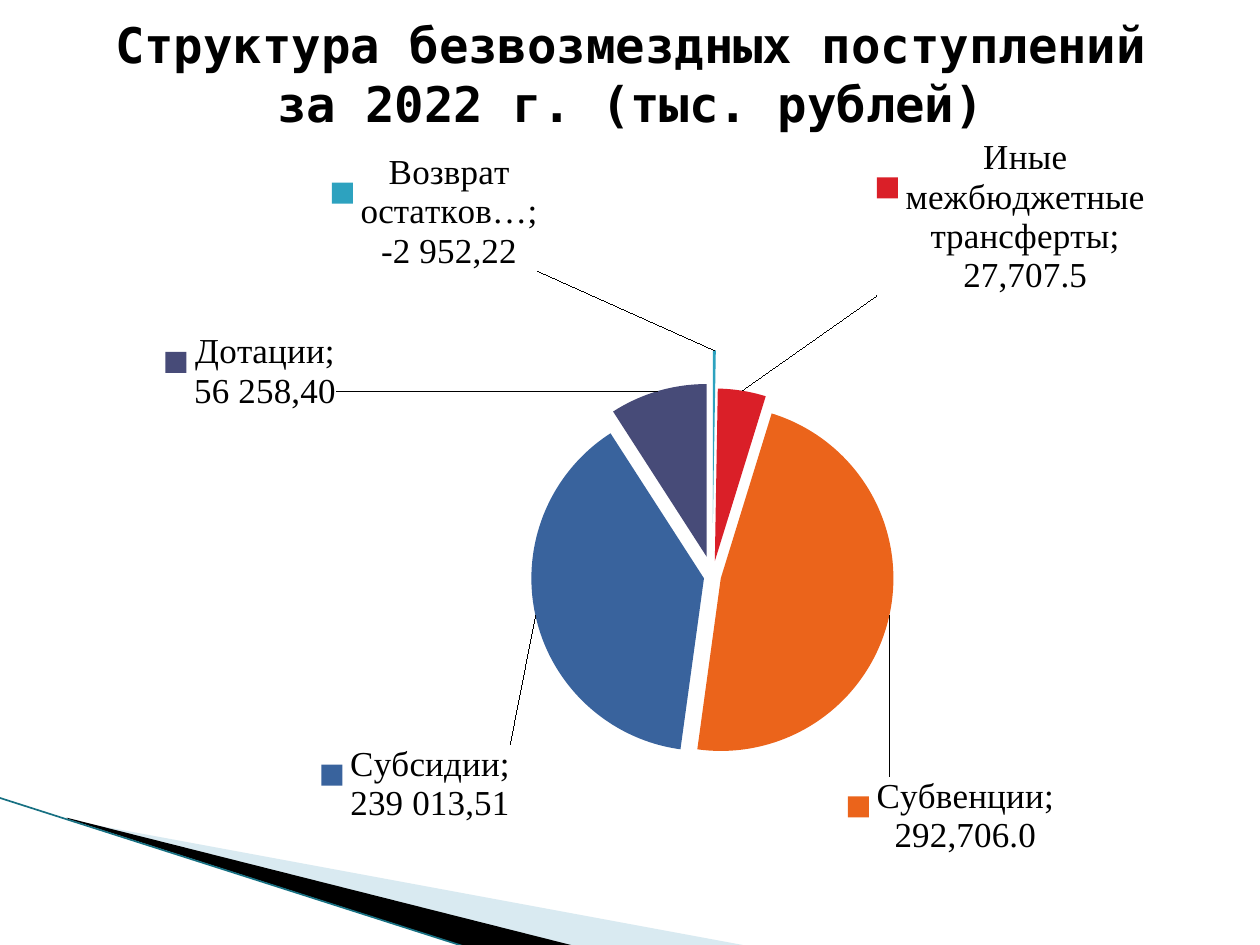
import pptx
import pptx.chart.data
import pptx.dml.color
import pptx.enum.chart
import pptx.enum.shapes
import pptx.enum.text
import pptx.oxml
import pptx.oxml.ns
import pptx.util

COLORS = {
    "black": "000000", "pale": "A0CBDC", "teal": "177082",
    "returns": "2DA2BF", "other": "DA1F28", "subventions": "EB641B",
    "subsidies": "39639D", "grants": "474B78",
}
COLUMNS, ROWS = 100, 75

SECTORS = [
    ("Возврат остатков…", 1703.9, "returns", 31, (-0.23, -0.09),
     ["Возврат остатков…;", "-2 952,22"]),
    ("Иные межбюджетные трансферты", 27707.5, "other", 9, (0.11, -0.11), []),
    ("Субвенции", 292706, "subventions", 5, (-0.04, 0.2), []),
    ("Субсидии", 239013.5, "subsidies", 5, (-0.015, 0.16),
     ["Субсидии;", "239 013,51"]),
    ("Дотации", 56258.4, "grants", 12, (-0.263, 0.034),
     ["Дотации;", "56 258,40"]),
]


def element(tag, value=None, **attributes):
    e = pptx.oxml.parse_xml(f"<{tag} {pptx.oxml.ns.nsdecls(tag.split(':')[0])}/>")
    if value is not None:
        e.set("val", str(value))
    for name, text in attributes.items():
        e.set(name, text)
    return e


def manual_layout(**values):
    layout = element("c:layout")
    manual = element("c:manualLayout")
    layout.append(manual)
    for name, value in values.items():
        manual.append(element(f"c:{name}", value))
    return layout


class Deck:
    title_font = "DejaVu Sans Mono"
    label_font = "Times New Roman"

    def __init__(self):
        self.prs = pptx.Presentation()
        self.prs.slide_width = pptx.util.Inches(10)
        self.prs.slide_height = pptx.util.Inches(7.5)
        self.s = self.prs.slides.add_slide(self.prs.slide_layouts[6])

    def x(self, columns):
        return round(self.prs.slide_width * columns / COLUMNS)

    def y(self, rows):
        return round(self.prs.slide_height * rows / ROWS)

    def box(self, left, top, width, height):
        return self.x(left), self.y(top), self.x(width), self.y(height)

    def color(self, name):
        return pptx.dml.color.RGBColor.from_string(COLORS[name])

    def style(self, font, face, size, bold=False):
        font.name = face
        font.size = pptx.util.Pt(size)
        font.bold = bold
        font.color.rgb = self.color("black")

    def polygon(self, points, color, opacity=100):
        points = [(self.x(c), self.y(r)) for c, r in points]
        builder = self.s.shapes.build_freeform(*points[0])
        builder.add_line_segments(points[1:], close=True)
        sp = builder.convert_to_shape()
        sp.shadow.inherit = False
        sp.fill.solid()
        sp.fill.fore_color.rgb = self.color(color)
        sp.line.fill.background()
        if opacity < 100:
            fill = sp._element.spPr.find(".//" + pptx.oxml.ns.qn("a:srgbClr"))
            fill.append(element("a:alpha", opacity * 1000))

    def line(self, start, end, color, width):
        sp = self.s.shapes.add_connector(
            pptx.enum.shapes.MSO_CONNECTOR.STRAIGHT,
            self.x(start[0]), self.y(start[1]), self.x(end[0]), self.y(end[1]))
        sp.line.color.rgb = self.color(color)
        sp.line.width = pptx.util.Pt(width)
        sp._element.spPr.append(element("a:effectLst"))

    def title(self, text, *box):
        tf = self.s.shapes.add_textbox(*self.box(*box)).text_frame
        tf.word_wrap = True
        tf.vertical_anchor = pptx.enum.text.MSO_ANCHOR.MIDDLE
        p = tf.paragraphs[0]
        p.alignment = pptx.enum.text.PP_ALIGN.CENTER
        r = p.add_run()
        r.text = text
        self.style(r.font, self.title_font, 28, True)

    def sector_label(self, point, offset, lines):
        label = point.data_label
        if lines:
            tf = label.text_frame
            for i, text in enumerate(lines):
                p = tf.add_paragraph() if i else tf.paragraphs[0]
                r = p.add_run()
                r.text = text
                self.style(r.font, self.label_font, 20)
        else:
            self.style(label.font, self.label_font, 20)
        label.position = pptx.enum.chart.XL_LABEL_POSITION.BEST_FIT
        return manual_layout(x=offset[0], y=offset[1])

    def pie(self, sectors, *box):
        data = pptx.chart.data.CategoryChartData()
        data.categories = [sector[0] for sector in sectors]
        data.add_series("Series 1", [sector[1] for sector in sectors])
        chart = self.s.shapes.add_chart(
            pptx.enum.chart.XL_CHART_TYPE.PIE, *self.box(*box), data).chart
        chart.has_legend = False
        chart.has_title = False
        self.style(chart.font, self.title_font, 18)
        plot = chart.plots[0]
        plot.vary_by_categories = True
        series = plot.series[0]
        labels = series.data_labels
        self.style(labels.font, self.label_font, 20)
        labels.number_format = "#,##0.0"
        labels.number_format_is_linked = False
        labels.position = pptx.enum.chart.XL_LABEL_POSITION.BEST_FIT
        labels.show_value = labels.show_category_name = True
        qn = pptx.oxml.ns.qn
        for i, (_, _, color, explosion, offset, lines) in enumerate(sectors):
            point = series.points[i]
            point.format.fill.solid()
            point.format.fill.fore_color.rgb = self.color(color)
            dpt = series._element.findall(qn("c:dPt"))[i]
            dpt.find(qn("c:spPr")).addprevious(element("c:explosion", explosion))
            layout = self.sector_label(point, offset, lines)
            dlbl = series._element.findall(".//" + qn("c:dLbl"))[i]
            dlbl.insert(1, layout)
            if not lines:
                layout.addnext(element("c:numFmt", formatCode="#,##0.0", sourceLinked="0"))
            for name in ("showLegendKey", "showVal", "showCatName"):
                dlbl.find(qn(f"c:{name}")).set("val", "1")
        widest = max(sector[3] for sector in sectors)
        series._element.find(qn("c:dPt")).addprevious(element("c:explosion", widest))
        root = series._element.find(qn("c:dLbls"))
        root.find(qn("c:showLegendKey")).set("val", "1")
        for old in root.findall(qn("c:showLeaderLines")):
            root.remove(old)
        root.append(element("c:showLeaderLines", 1))
        area = chart._chartSpace.find(".//" + qn("c:plotArea"))
        for old in area.findall(qn("c:layout")):
            area.remove(old)
        area.insert(0, manual_layout(
            layoutTarget="inner", xMode="edge", yMode="edge",
            x=0.234, y=0.283, w=0.646, h=0.567))


def main():
    deck = Deck()
    deck.polygon([(5.5, 65.1), (59.5, 75.1), (45.6, 75.1), (5.5, 65)], "pale", 40)
    deck.polygon([(5.3, 64.9), (45.7, 75.1), (37.2, 75.2), (5.4, 65)], "black")
    deck.line((-0.1, 63.3), (37.1, 75.2), "teal", 0.95)
    deck.pie(SECTORS, 2.8, 9.9, 96.5, 63.3)
    deck.title("Структура безвозмездных поступлений за 2022 г. (тыс. рублей)",
               5.5, 0, 89.1, 11.7)
    deck.prs.save("out.pptx")


if __name__ == "__main__":
    main()
